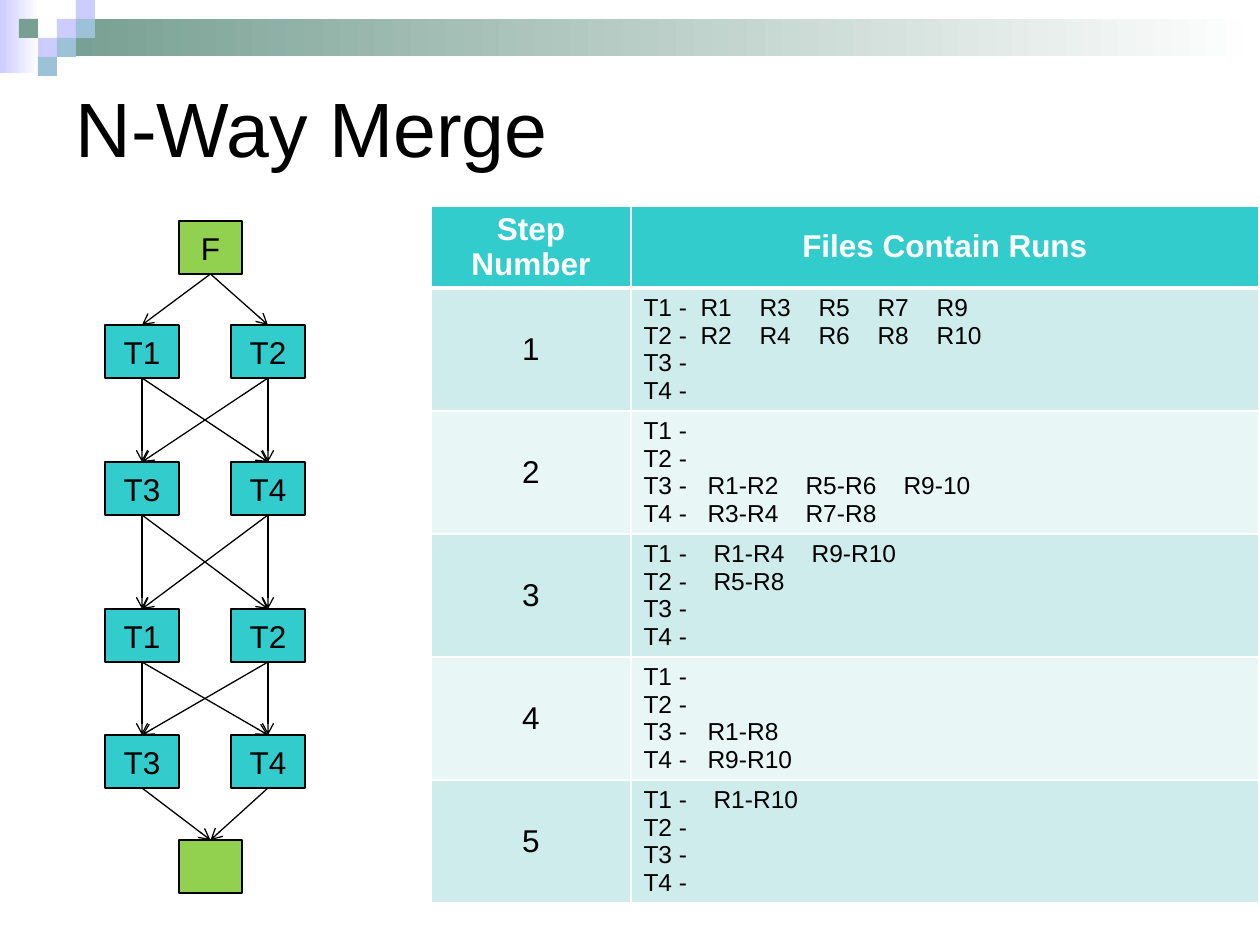
from pptx import Presentation
from pptx.dml.color import RGBColor
from pptx.enum.shapes import MSO_CONNECTOR as CONN, MSO_SHAPE as SHAPE
from pptx.enum.text import MSO_ANCHOR as ANCHOR, PP_ALIGN as ALIGN
from pptx.oxml.ns import qn
from pptx.util import Emu, Pt
from lxml.etree import SubElement

COLORS = {
    "black": "000000", "white": "FFFFFF", "lilac": "CCCCFF", "sage": "779F92",
    "sky": "9DC2D7", "teal": "33CCCC", "green": "92D050",
    "band1": "CEECEC", "band2": "E8F6F6",
}
TILE = 19
TILES = [(3, 1, "lilac"), (4, 0, "lilac"), (4, 1, "sky"), (2, 2, "lilac"),
         (1, 1, "sage"), (3, 2, "sky"), (2, 3, "sky")]
BOX_H = 53
LEVELS = [(325, ("T1", "T2")), (462, ("T3", "T4")),
          (609, ("T1", "T2")), (735, ("T3", "T4"))]
FILES = ("T1", "T2", "T3", "T4")
# Each step: first tab stop, tab pitch, runs held by each file
STEPS = [
    (57, 59, {"T1": ["R1", "R3", "R5", "R7", "R9"],
              "T2": ["R2", "R4", "R6", "R8", "R10"]}),
    (64, 98, {"T3": ["R1-R2", "R5-R6", "R9-10"], "T4": ["R3-R4", "R7-R8"]}),
    (70, 98, {"T1": ["R1-R4", "R9-R10"], "T2": ["R5-R8"]}),
    (64, 98, {"T3": ["R1-R8"], "T4": ["R9-R10"]}),
    (70, 98, {"T1": ["R1-R10"]}),
]
HEAD = {"size": Pt(18), "bold": True, "color": "white", "spacing": Pt(19.8)}
NUMBER = {"size": Pt(18), "bold": False, "color": "black"}
BODY = {"size": Pt(14), "bold": False, "color": "black", "spacing": Pt(15.7)}


def px(n):
    """Turn pixels into EMU."""
    return Emu(round(n * 914400 / 126))


def rgb(name):
    """Look up a named colour."""
    return RGBColor.from_string(COLORS[name])


def write(p, text, size, color, bold=False, align=ALIGN.CENTER, spacing=None):
    """Put one formatted run into a paragraph."""
    p.alignment = align
    if spacing:
        p.line_spacing = spacing
    r = p.add_run()
    r.text = text
    for key, value in {"name": "Arial", "size": size, "bold": bold}.items():
        setattr(r.font, key, value)
    r.font.color.rgb = rgb(color)


def add_rect(s, x, y, w, h, *fill):
    """Add a borderless rectangle, a gradient if two colours are given."""
    sp = s.shapes.add_shape(SHAPE.RECTANGLE, px(x), px(y), px(w), px(h))
    sp.shadow.inherit = False
    sp.line.fill.background()
    if len(fill) == 1:
        sp.fill.solid()
        sp.fill.fore_color.rgb = rgb(fill[0])
    else:
        sp.fill.gradient()
        sp.fill.gradient_angle = 0
        for stop, name in zip(sp.fill.gradient_stops, fill):
            stop.color.rgb = rgb(name)
    return sp


def add_box(s, x, y, w, fill, text=""):
    """Add an outlined diagram box with a centred label."""
    sp = add_rect(s, x, y, w, BOX_H, fill)
    sp.line.color.rgb = rgb("black")
    sp.line.width = Pt(0.75)
    if text:
        tf = sp.text_frame
        tf.vertical_anchor = ANCHOR.MIDDLE
        tf.word_wrap = False
        write(tf.paragraphs[0], text, Pt(18), "black")
    return sp


def add_arrow(s, start, end):
    """Join the bottom of one box to the top of another."""
    c = s.shapes.add_connector(CONN.STRAIGHT, 0, 0, 0, 0)
    c.begin_connect(start, 2)
    c.end_connect(end, 0)
    c.line.color.rgb = rgb("black")
    c.line.width = Pt(0.75)
    SubElement(c.line._get_or_add_ln(), qn("a:tailEnd"), type="arrow")
    SubElement(c.element.spPr, qn("a:effectLst"))


def style_cell(cell, fill, bottom=1):
    """Give a cell white borders, a fill and a middle anchor."""
    tc_pr = cell._tc.get_or_add_tcPr()
    for side, width in {"L": 1, "R": 1, "T": 1, "B": bottom}.items():
        ln = SubElement(tc_pr, qn(f"a:ln{side}"), w=str(Pt(width)))
        solid = SubElement(ln, qn("a:solidFill"))
        SubElement(solid, qn("a:srgbClr"), val=COLORS["white"])
    cell.fill.solid()
    cell.fill.fore_color.rgb = rgb(fill)
    cell.vertical_anchor = ANCHOR.MIDDLE


def write_files(tf, first, pitch, runs):
    """List the files of one step, their runs set at tab stops."""
    for i, name in enumerate(FILES):
        p = tf.add_paragraph() if i else tf.paragraphs[0]
        held = runs.get(name, [])
        write(p, "\t".join([f"{name} -", *held]), align=ALIGN.LEFT, **BODY)
        if held:
            tabs = SubElement(p._p.get_or_add_pPr(), qn("a:tabLst"))
            for k in range(len(held)):
                SubElement(tabs, qn("a:tab"), pos=str(px(first + k * pitch)), algn="l")


def add_steps(s):
    """Add the table of merge steps."""
    widths, heights = (200, 628), [82] + [123] * len(STEPS)
    frame = s.shapes.add_table(len(heights), len(widths), px(431), px(206),
                               px(sum(widths)), px(sum(heights)))
    table = frame.table
    for col, w in zip(table.columns, widths):
        col.width = px(w)
    for row, h in zip(table.rows, heights):
        row.height = px(h)
    for i, text in enumerate(("Step Number", "Files Contain Runs")):
        cell = table.cell(0, i)
        style_cell(cell, "teal", bottom=3)
        write(cell.text_frame.paragraphs[0], text, **HEAD)
    for n, step in enumerate(STEPS, 1):
        number, files = table.cell(n, 0), table.cell(n, 1)
        for cell in (number, files):
            style_cell(cell, "band1" if n % 2 else "band2")
        write(number.text_frame.paragraphs[0], str(n), **NUMBER)
        write_files(files.text_frame, *step)


def add_diagram(s):
    """Add the boxes of the merge and join each level to the next."""
    levels = [[add_box(s, 179, 221, 63, "green", "F")]]
    for y, names in LEVELS:
        levels.append([add_box(s, x, y, 74, "teal", name)
                       for x, name in zip((105, 231), names)])
    levels.append([add_box(s, 179, 840, 63, "green")])
    for upper, lower in zip(levels, levels[1:]):
        for start in upper:
            for end in lower:
                add_arrow(s, start, end)


def add_banner(s):
    """Add the fading bars and small tiles along the top."""
    add_rect(s, 0, 0, 39, 73, "lilac", "white")
    add_rect(s, 57, 19, 1203, 37, "sage", "white")
    for col, row, fill in TILES:
        add_rect(s, col * TILE, row * TILE, TILE, TILE, fill)


def add_title(s, text):
    """Place and format the title, in front of the banner."""
    sp = s.shapes.title
    sp.element.getparent().append(sp.element)
    box = {"left": 63, "top": 32, "width": 1134, "height": 189}
    for key, value in box.items():
        setattr(sp, key, px(value))
    sp.text_frame.vertical_anchor = ANCHOR.MIDDLE
    write(sp.text_frame.paragraphs[0], text, Pt(44), "black", align=ALIGN.LEFT)


def main():
    """Build and save the slide."""
    prs = Presentation()
    prs.slide_width, prs.slide_height = px(1260), px(945)
    s = prs.slides.add_slide(prs.slide_layouts[5])
    add_banner(s)
    add_title(s, "N-Way Merge")
    add_steps(s)
    add_diagram(s)
    prs.save("out.pptx")


if __name__ == "__main__":
    main()
